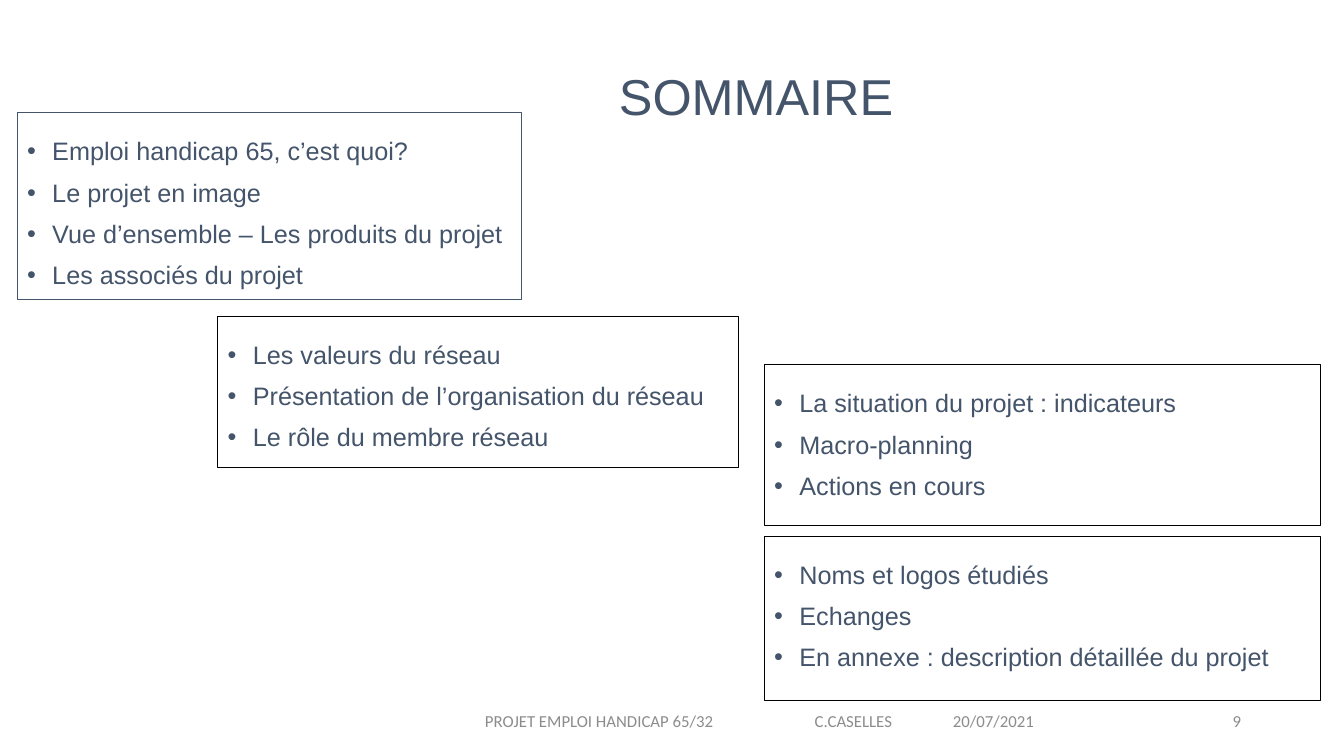
from lxml import etree
from pptx import Presentation
from pptx import util as u
from pptx.dml.color import RGBColor
from pptx.enum import shapes, text
from pptx.oxml.ns import qn

SLATE = RGBColor(0x44, 0x54, 0x6A)
BLACK = RGBColor(0, 0, 0)
GREY = RGBColor(0x8C, 0x8C, 0x8C)

# Left, top, width, height, border colour, topics
BOXES = [
    (0.17, 1.12, 5, 1.85, SLATE, [
        "Emploi handicap 65, c’est quoi?",
        "Le projet en image",
        "Vue d’ensemble – Les produits du projet",
        "Les associés du projet"]),
    (2.16, 3.14, 5.17, 1.5, BLACK, [
        "Les valeurs du réseau",
        "Présentation de l’organisation du réseau",
        "Le rôle du membre réseau"]),
    (7.58, 3.62, 5.52, 1.59, BLACK, [
        "La situation du projet : indicateurs",
        "Macro-planning",
        "Actions en cours"]),
    (7.58, 5.32, 5.52, 1.63, BLACK, [
        "Noms et logos étudiés",
        "Echanges",
        "En annexe : description détaillée du projet"]),
]


def place(shape, left, top, width, height):
    shape.left, shape.top = u.Inches(left), u.Inches(top)
    shape.width, shape.height = u.Inches(width), u.Inches(height)


def bullet(para):
    props = para._p.get_or_add_pPr()
    props.set("marL", str(u.Inches(0.25)))
    props.set("indent", str(u.Inches(-0.25)))
    etree.SubElement(props, qn("a:buFont")).set("typeface", "Arial")
    etree.SubElement(props, qn("a:buChar")).set("char", "•")


def add_tabs(para, stops):
    tabs = etree.SubElement(para._p.get_or_add_pPr(), qn("a:tabLst"))
    for stop in stops:
        tab = etree.SubElement(tabs, qn("a:tab"))
        tab.set("pos", str(u.Inches(stop)))
        tab.set("algn", "l")


def write(frame, lines, size=18, font="Arial", color=SLATE, align="LEFT",
          anchor="TOP", space=None, gap=0, bullets=False, tabs=(),
          inset=0.1, head=0.05):
    frame.word_wrap = True
    frame.auto_size = text.MSO_AUTO_SIZE.NONE
    frame.vertical_anchor = text.MSO_ANCHOR[anchor]
    frame.margin_left, frame.margin_top = u.Inches(inset), u.Inches(head)
    for i, line in enumerate(lines):
        para = frame.paragraphs[0] if i == 0 else frame.add_paragraph()
        if bullets:
            bullet(para)
        if tabs:
            add_tabs(para, tabs)
        para.alignment = text.PP_ALIGN[align]
        para.line_spacing = space
        para.space_before = u.Pt(gap if i else 0)
        run = para.add_run()
        run.text = line
        run.font.size = u.Pt(size)
        run.font.name = font
        run.font.color.rgb = color


def add_box(slide, left, top, width, height, edge, topics):
    box = slide.shapes.add_shape(shapes.MSO_SHAPE.RECTANGLE, 0, 0, 0, 0)
    place(box, left, top, width, height)
    box.shadow.inherit = False
    box.fill.background()
    box.line.color.rgb = edge
    box.line.width = u.Pt(0.75)
    write(box.text_frame, topics, space=0.9, gap=10, bullets=True, head=0.26)


def add_foot(slide, line, left, width, **style):
    box = slide.shapes.add_textbox(0, 0, 0, 0)
    place(box, left, 6.95, width, 0.4)
    write(box.text_frame, [line], size=12, font="Calibri", color=GREY,
          anchor="MIDDLE", **style)


def main():
    deck = Presentation()
    deck.slide_width, deck.slide_height = u.Inches(13.33), u.Inches(7.5)
    slide = deck.slides.add_slide(deck.slide_layouts[5])

    # Title
    title = slide.shapes.title
    place(title, 5.61, 0.51, 3.78, 0.79)
    write(title.text_frame, ["SOMMAIRE"], size=36, align="CENTER",
          anchor="BOTTOM", space=0.9)

    # Topic boxes
    for box in BOXES:
        add_box(slide, *box)

    # Footer and page number
    add_foot(slide, "PROJET EMPLOI HANDICAP 65/32\tC.CASELLES\t20/07/2021",
             4.42, 6.25, inset=0.39, tabs=(3.27, 4.64))
    add_foot(slide, "9", 11.01, 1.4, align="RIGHT")

    deck.save("out.pptx")


if __name__ == "__main__":
    main()
